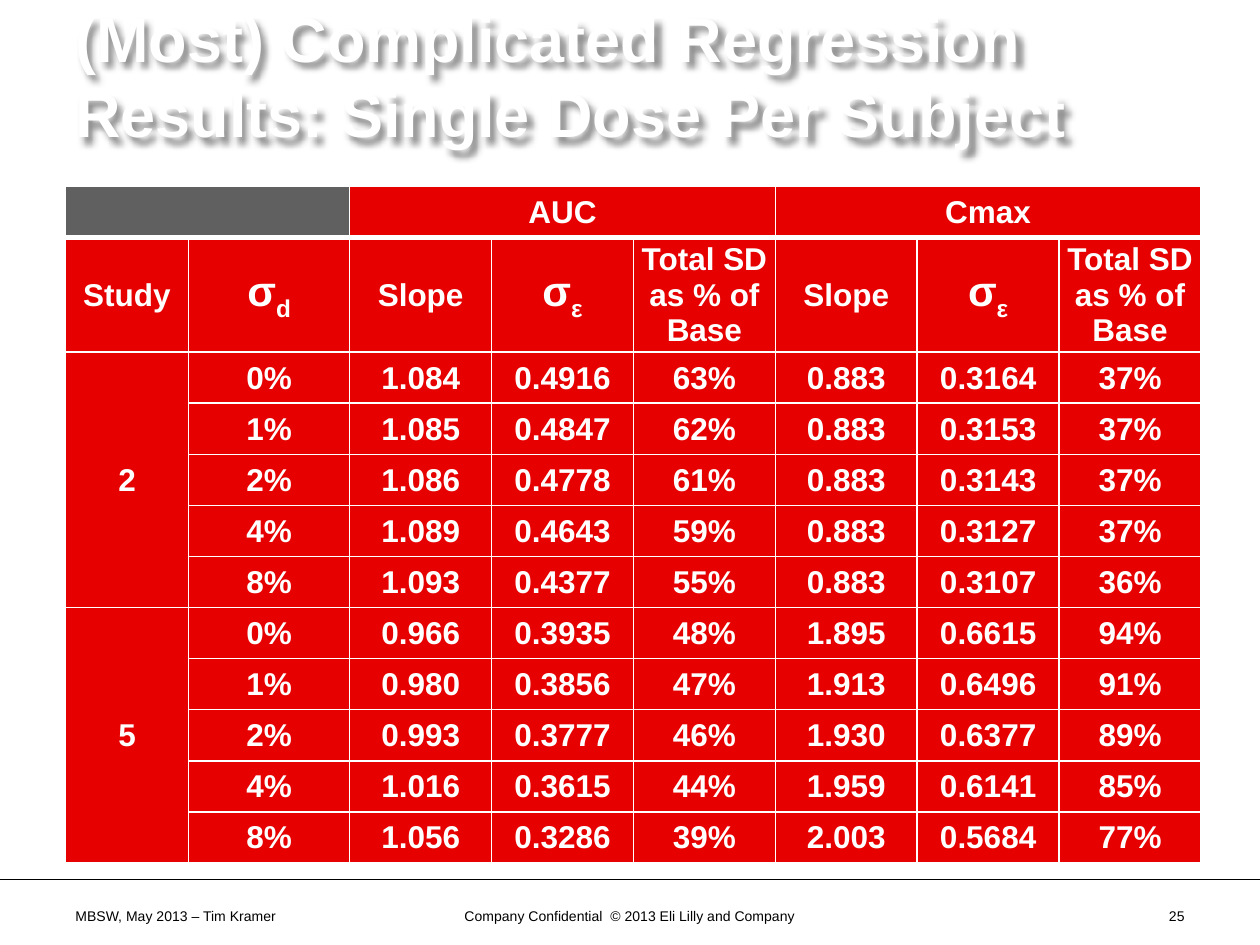
import lxml.etree
import pptx
import pptx.dml.color
import pptx.enum.shapes
import pptx.enum.text
import pptx.oxml.ns
import pptx.util

Cm = pptx.util.Cm
Pt = pptx.util.Pt
RGBColor = pptx.dml.color.RGBColor
ALIGN = pptx.enum.text.PP_ALIGN
ANCHOR = pptx.enum.text.MSO_ANCHOR
qn = pptx.oxml.ns.qn

WHITE = RGBColor(0xFF, 0xFF, 0xFF)
BLACK = RGBColor(0, 0, 0)
RED = RGBColor(0xE6, 0, 0)
GRAY = RGBColor(0x60, 0x60, 0x60)

COL_WIDTHS = [2.48, 3.25] + [2.86] * 6
ROW_HEIGHTS = [1.03, 2.14] + [1.03] * 10
MEASURES = ["Slope", "σ_ε", "Total SD as % of Base"]
HEADINGS = ["Study", "σ_d"] + MEASURES * 2
DOSE_SDS = ["0%", "1%", "2%", "4%", "8%"]
# Per study, one row for each dose SD: AUC measures, then Cmax measures
STUDIES = {
    "2": [
        ["1.084", "0.4916", "63%", "0.883", "0.3164", "37%"],
        ["1.085", "0.4847", "62%", "0.883", "0.3153", "37%"],
        ["1.086", "0.4778", "61%", "0.883", "0.3143", "37%"],
        ["1.089", "0.4643", "59%", "0.883", "0.3127", "37%"],
        ["1.093", "0.4377", "55%", "0.883", "0.3107", "36%"],
    ],
    "5": [
        ["0.966", "0.3935", "48%", "1.895", "0.6615", "94%"],
        ["0.980", "0.3856", "47%", "1.913", "0.6496", "91%"],
        ["0.993", "0.3777", "46%", "1.930", "0.6377", "89%"],
        ["1.016", "0.3615", "44%", "1.959", "0.6141", "85%"],
        ["1.056", "0.3286", "39%", "2.003", "0.5684", "77%"],
    ],
}


def write(tf, text, size=18, color=WHITE, bold=True, align=ALIGN.CENTER):
    """Write one paragraph; what follows an underscore is subscript."""
    p = tf.paragraphs[0]
    p.alignment = align
    for i, part in enumerate(text.split("_")):
        r = p.add_run()
        r.text = part
        r.font.size = Pt(size)
        r.font.name = "Arial"
        r.font.bold = bold
        r.font.color.rgb = color
        if i:
            r.font._element.set("baseline", "-25000")


def add_box(s, left, top, width, height, anchor=ANCHOR.TOP):
    sp = s.shapes.add_textbox(Cm(left), Cm(top), Cm(width), Cm(height))
    tf = sp.text_frame
    tf.word_wrap = True
    tf.vertical_anchor = anchor
    return sp


def add_shadow(sp):
    """Give an unfilled box a shadow, which falls from its text."""
    effects = lxml.etree.SubElement(sp._element.spPr, qn("a:effectLst"))
    shadow = lxml.etree.SubElement(
        effects, qn("a:outerShdw"), blurRad=str(Pt(4)), dist=str(Pt(4)),
        dir="2700000", algn="tl", rotWithShape="0")
    color = lxml.etree.SubElement(shadow, qn("a:srgbClr"), val=str(BLACK))
    lxml.etree.SubElement(color, qn("a:alpha"), val="43000")


def add_title(s, left, top, width, height):
    sp = add_box(s, left, top, width, height, ANCHOR.MIDDLE)
    write(sp.text_frame,
          "(Most) Complicated Regression Results: Single Dose Per Subject",
          size=36, align=ALIGN.LEFT)
    add_shadow(sp)


def set_borders(cell, widths):
    tcPr = cell._tc.get_or_add_tcPr()
    for i, (side, width) in enumerate(widths.items()):
        ln = lxml.etree.Element(qn("a:ln" + side), w=str(Pt(width)))
        fill = lxml.etree.SubElement(ln, qn("a:solidFill"))
        lxml.etree.SubElement(fill, qn("a:srgbClr"), val=str(WHITE))
        tcPr.insert(i, ln)


def add_results_table(s, left, top):
    frame = s.shapes.add_table(
        len(ROW_HEIGHTS), len(COL_WIDTHS), Cm(left), Cm(top),
        Cm(sum(COL_WIDTHS)), Cm(sum(ROW_HEIGHTS)))
    table = frame.table
    for col, width in zip(table.columns, COL_WIDTHS):
        col.width = Cm(width)
    for row, height in zip(table.rows, ROW_HEIGHTS):
        row.height = Cm(height)

    # Wording: empty strings are covered by merged cells
    rows = [["", "", "AUC", "", "", "Cmax", "", ""], HEADINGS]
    for study, results in STUDIES.items():
        for i, (dose_sd, values) in enumerate(zip(DOSE_SDS, results)):
            rows.append([study if i == 0 else "", dose_sd] + values)

    # Cell format
    for y, texts in enumerate(rows):
        for x, text in enumerate(texts):
            cell = table.cell(y, x)
            cell.margin_left = cell.margin_right = cell.margin_top = Cm(0.02)
            cell.margin_bottom = 0
            cell.vertical_anchor = ANCHOR.MIDDLE
            cell.fill.solid()
            cell.fill.fore_color.rgb = GRAY if y == 0 and x < 2 else RED
            borders = {"L": 1, "R": 1, "T": 1, "B": 3 if y == 0 else 1}
            if y == 1:  # the thick rule above belongs to the group headings
                del borders["T"]
            set_borders(cell, borders)
            if text:
                write(cell.text_frame, text, size=24 if "_" in text else 18)

    # Group headings and study labels
    for first, last in ((0, 1), (2, 4), (5, 7)):
        table.cell(0, first).merge(table.cell(0, last))
    for i in range(len(STUDIES)):
        first = 2 + i * len(DOSE_SDS)
        table.cell(first, 0).merge(table.cell(first + len(DOSE_SDS) - 1, 0))


def add_footer(s, top, width):
    # Rule across the slide
    line = s.shapes.add_connector(
        pptx.enum.shapes.MSO_CONNECTOR.STRAIGHT, 0, Cm(top), Cm(width), Cm(top))
    line.line.color.rgb = BLACK
    line.line.width = Pt(0.5)
    lxml.etree.SubElement(line._element.spPr, qn("a:effectLst"))

    # Venue, copyright and page number
    for left, box_width, text, align in (
            (1.27, 5.92, "MBSW, May 2013 – Tim Kramer", ALIGN.LEFT),
            (8.68, 8.04, "Company Confidential  © 2013 Eli Lilly and Company",
             ALIGN.CENTER),
            (18.21, 5.92, "25", ALIGN.RIGHT)):
        sp = add_box(s, left, top + 0.44, box_width, 0.63)
        write(sp.text_frame, text, size=8, color=BLACK, bold=False, align=align)


def main():
    prs = pptx.Presentation()
    prs.slide_width = Cm(25.4)
    prs.slide_height = Cm(19.05)
    s = prs.slides.add_slide(prs.slide_layouts[6])
    add_footer(s, 17.73, 25.4)
    add_title(s, 1.27, -0.08, 22.86, 3.18)
    add_results_table(s, 1.32, 3.76)
    prs.save("out.pptx")


if __name__ == "__main__":
    main()
